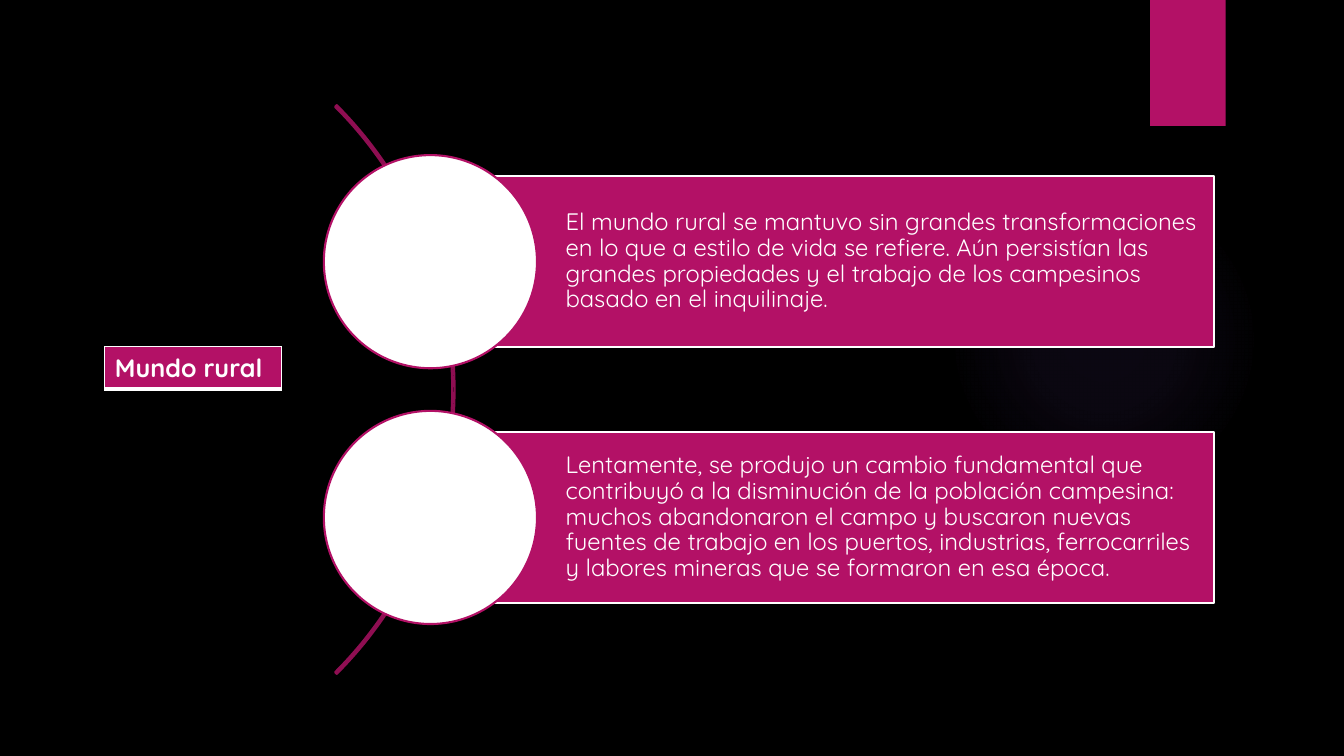
from lxml import etree
from pptx import Presentation
from pptx.dml.color import RGBColor
from pptx.enum.shapes import MSO_SHAPE
from pptx.enum.text import MSO_ANCHOR, PP_ALIGN
from pptx.oxml import parse_xml
from pptx.oxml.ns import nsdecls, qn
from pptx.util import Inches, Pt

RECTANGLE = MSO_SHAPE.RECTANGLE
OVAL = MSO_SHAPE.OVAL
BLOCK_ARC = MSO_SHAPE.BLOCK_ARC
MIDDLE = MSO_ANCHOR.MIDDLE
LEFT = PP_ALIGN.LEFT

COLUMNS, ROWS = 160, 90
PAGE_WIDTH, PAGE_HEIGHT = Inches(13.333), Inches(7.5)
FONT = "Quicksand"
MAGENTA, DARK_MAGENTA = "B31166", "8F0E52"
WHITE, BLACK, VIOLET = "FFFFFF", "000000", "9B6BF2"

PANEL_LEFT, PANEL_TOP = 51.24, 21
PANEL_WIDTH, PANEL_HEIGHT = 93.24, 20.3
PANEL_PITCH = 1.5 * PANEL_HEIGHT
CIRCLE_SIZE = 1.25 * PANEL_HEIGHT
ARC_SIZE = 95.76
ARC_CENTRE = 6.24

STATEMENTS = [
    "El mundo rural se mantuvo sin grandes transformaciones en lo que a estilo "
    "de vida se refiere. Aún persistían las grandes propiedades y el trabajo de "
    "los campesinos basado en el inquilinaje.",
    "Lentamente, se produjo un cambio fundamental que contribuyó a la disminución "
    "de la población campesina: muchos abandonaron el campo y buscaron nuevas "
    "fuentes de trabajo en los puertos, industrias, ferrocarriles y labores "
    "mineras que se formaron en esa época.",
]


def colour(value):
    return RGBColor.from_string(value)


def across(columns):
    return round(PAGE_WIDTH * columns / COLUMNS)


def down(rows):
    return round(PAGE_HEIGHT * rows / ROWS)


def area(left, top, width, height):
    return across(left), down(top), across(width), down(height)


def add_figure(page, preset, place, fill=None, line=None):
    shape = page.shapes.add_shape(preset, *area(*place))
    shape.shadow.inherit = False
    if fill:
        shape.fill.solid()
        shape.fill.fore_color.rgb = colour(fill)
    else:
        shape.fill.background()
    if line:
        shape.line.color.rgb = colour(line)
        shape.line.width = Pt(1.5)
    else:
        shape.line.fill.background()
    return shape


def write(frame, text, size, bold=False, spacing=1.0, after=0):
    para = frame.paragraphs[0]
    para.alignment = LEFT
    para.line_spacing = spacing
    para.space_after = Pt(after)
    span = para.add_run()
    span.text = text
    span.font.name = FONT
    span.font.size = Pt(size)
    span.font.bold = bold
    span.font.color.rgb = colour(WHITE)


def add_glow(page):
    glow = add_figure(page, OVAL, (112.92, 21.96, 36.96, 36.96))
    stops = "".join(
        f'<a:gs pos="{position * 1000}"><a:srgbClr val="{VIOLET}">'
        f'<a:alpha val="{opacity * 1000}"/></a:srgbClr></a:gs>'
        for position, opacity in [(0, 7), (36, 6), (69, 0)]
    )
    gradient = parse_xml(
        f'<a:gradFill {nsdecls("a")}><a:gsLst>{stops}</a:gsLst><a:path path="circle">'
        '<a:fillToRect l="50000" t="50000" r="50000" b="50000"/></a:path></a:gradFill>'
    )
    properties = glow._element.spPr
    properties.replace(properties.find(qn("a:noFill")), gradient)


def add_tab(page):
    tab = add_figure(page, RECTANGLE, (136.92, 0, 9, 15), MAGENTA)
    effects = tab._element.spPr.find(qn("a:effectLst"))
    effects.append(parse_xml(
        f'<a:outerShdw {nsdecls("a")} blurRad="{Pt(3)}" dist="{Pt(2)}" dir="5400000" '
        f'rotWithShape="0"><a:srgbClr val="{BLACK}"><a:alpha val="45000"/>'
        '</a:srgbClr></a:outerShdw>'
    ))


def add_arc(page):
    middle = PANEL_TOP + (PANEL_PITCH + PANEL_HEIGHT) / 2
    radius = ARC_SIZE / 2
    place = (ARC_CENTRE - radius, middle - radius, ARC_SIZE, ARC_SIZE)
    arc = add_figure(page, BLOCK_ARC, place, line=DARK_MAGENTA)
    for index, value in enumerate((189, 27, 0.003)):
        arc.adjustments[index] = value


def add_statement(page, index, text):
    top = PANEL_TOP + index * PANEL_PITCH
    panel = add_figure(page, RECTANGLE, (PANEL_LEFT, top, PANEL_WIDTH, PANEL_HEIGHT),
                       MAGENTA, WHITE)
    frame = panel.text_frame
    frame.word_wrap = True
    frame.vertical_anchor = MIDDLE
    frame.margin_left = across(16.08)
    frame.margin_right = across(0.6)
    frame.margin_top = frame.margin_bottom = down(0.6)
    write(frame, text, 17, spacing=0.9, after=6)
    radius = CIRCLE_SIZE / 2
    centre = top + PANEL_HEIGHT / 2
    add_figure(page, OVAL, (PANEL_LEFT - radius, centre - radius, CIRCLE_SIZE, CIRCLE_SIZE),
               WHITE, MAGENTA)


def add_border(cell, side, width):
    properties = cell._tc.get_or_add_tcPr()
    border = etree.SubElement(properties, qn(f"a:ln{side}"), w=str(Pt(width)))
    fill = etree.SubElement(border, qn("a:solidFill"))
    etree.SubElement(fill, qn("a:srgbClr"), val=WHITE)


def add_label(page, text):
    table = page.shapes.add_table(1, 1, *area(12.48, 41.28, 21, 5.04)).table
    cell = table.cell(0, 0)
    for side, width in {"L": 1, "R": 1, "T": 1, "B": 3}.items():
        add_border(cell, side, width)
    cell.fill.solid()
    cell.fill.fore_color.rgb = colour(MAGENTA)
    write(cell.text_frame, text, 18, bold=True)


def main():
    deck = Presentation()
    deck.slide_width, deck.slide_height = PAGE_WIDTH, PAGE_HEIGHT
    page = deck.slides.add_slide(deck.slide_layouts[6])
    page.background.fill.solid()
    page.background.fill.fore_color.rgb = colour(BLACK)
    add_glow(page)
    add_tab(page)
    add_arc(page)
    for index, text in enumerate(STATEMENTS):
        add_statement(page, index, text)
    add_label(page, "Mundo rural")
    deck.save("out.pptx")


if __name__ == "__main__":
    main()
